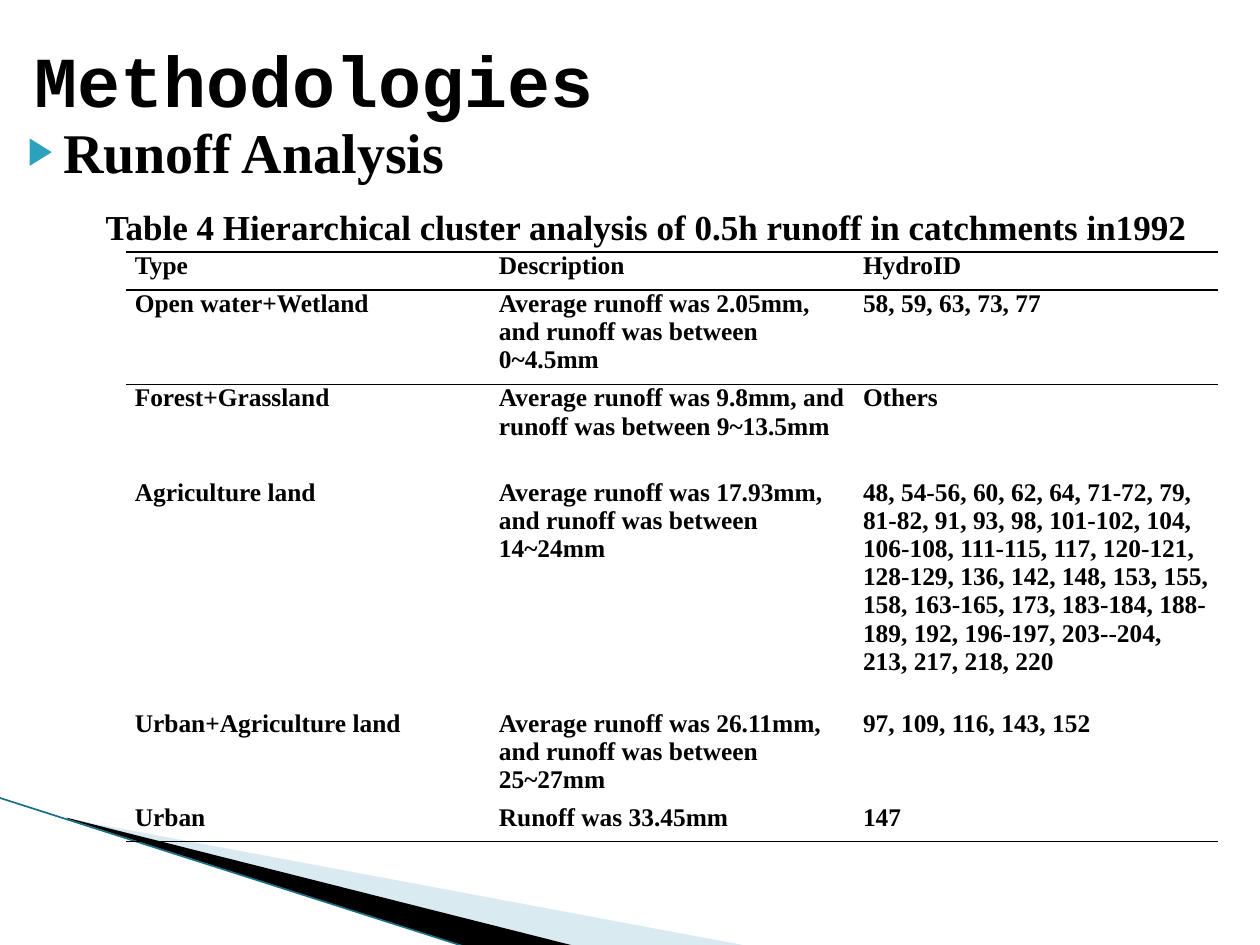
from lxml import etree
from pptx import Presentation
from pptx.dml.color import RGBColor
from pptx.enum.shapes import MSO_CONNECTOR as Conn
from pptx.enum.text import MSO_ANCHOR as Anchor, PP_ALIGN as Align
from pptx.oxml import parse_xml
from pptx.oxml.ns import nsdecls, qn
from pptx.util import Inches, Pt

BLACK = RGBColor(0x00, 0x00, 0x00)
PALE = RGBColor(0xA0, 0xCB, 0xDC)
TEAL = RGBColor(0x1A, 0x6E, 0x85)
SERIF, MONO = "Times New Roman", "Courier New"
NO_GRID = "{2D5ABB26-0587-4C30-8999-92F81FD0307C}"

ROWS = [
    ("Type", "Description", "HydroID"),
    ("Open water+Wetland",
     "Average runoff was 2.05mm, and runoff was between 0~4.5mm",
     "58, 59, 63, 73, 77"),
    ("Forest+Grassland",
     "Average runoff was 9.8mm, and runoff was between 9~13.5mm",
     "Others"),
    ("Agriculture land",
     "Average runoff was 17.93mm, and runoff was between 14~24mm",
     "48, 54-56, 60, 62, 64, 71-72, 79, 81-82, 91, 93, 98, 101-102, 104, "
     "106-108, 111-115, 117, 120-121, 128-129, 136, 142, 148, 153, 155, 158, "
     "163-165, 173, 183-184, 188-189, 192, 196-197, 203--204, 213, 217, 218, 220"),
    ("Urban+Agriculture land",
     "Average runoff was 26.11mm, and runoff was between 25~27mm",
     "97, 109, 116, 143, 152"),
    ("Urban", "Runoff was 33.45mm", "147"),
]
HEIGHTS = [0.3, 0.75, 0.75, 1.83, 0.75, 0.3]


def write(frame, text, size, font=SERIF, align=Align.LEFT, anchor=Anchor.TOP):
    frame.word_wrap = True
    frame.vertical_anchor = anchor
    para = frame.paragraphs[0]
    para.alignment = align
    para.space_before = Pt(0)
    run = para.add_run()
    run.text = text
    run.font.size, run.font.name, run.font.bold = Pt(size), font, True
    run.font.color.rgb = BLACK
    return para


def place(shape, box):
    shape.left, shape.top, shape.width, shape.height = map(Inches, box)


def add_wedge(slide, points, color, alpha=100):
    spots = [(Inches(x), Inches(y)) for x, y in points]
    build = slide.shapes.build_freeform(*spots[0])
    build.add_line_segments(spots[1:], close=True)
    wedge = build.convert_to_shape()
    wedge.shadow.inherit = False
    wedge.line.fill.background()
    wedge.fill.solid()
    wedge.fill.fore_color.rgb = color
    if alpha < 100:
        tint = wedge.fill._xPr.find(qn("a:solidFill"))[0]
        etree.SubElement(tint, qn("a:alpha"), val=str(alpha * 1000))


def add_decor(slide, box):
    left, top, width, height = box
    right, base = left + width, top + height
    add_wedge(slide, [(left + 0.02, top + 0.01), (right, base),
                      (4.56, base), (left + 0.02, top + 0.01)], PALE, 40)
    add_wedge(slide, [(left, top), (4.57, base), (3.72, base + 0.01),
                      (left + 0.01, top + 0.01)], BLACK)
    edge = slide.shapes.add_connector(
        Conn.STRAIGHT, Inches(-0.01), Inches(6.33), Inches(3.71), Inches(7.52))
    edge.line.color.rgb = TEAL
    edge.line.width = Pt(0.95)
    etree.SubElement(edge._element.spPr, qn("a:effectLst"))


def add_title(slide, box):
    title = slide.shapes.title
    place(title, box)
    write(title.text_frame, "Methodologies", 41, MONO, anchor=Anchor.MIDDLE)


def add_topic(slide, box):
    body = slide.placeholders[1]
    place(body, box)
    para = write(body.text_frame, "Runoff Analysis", 32)
    props = para._p.get_or_add_pPr()
    props.set("marL", str(Inches(0.4)))
    props.set("indent", str(Inches(-0.28)))
    for tag in ('buClr {}><a:srgbClr val="2DA2BF"/></a:buClr>',
                'buSzPct {} val="68000"/>',
                'buFont {} typeface="Arial"/>',
                'buChar {} char="▶"/>'):
        props.append(parse_xml("<a:" + tag.format(nsdecls("a"))))


def add_caption(slide, box):
    label = slide.shapes.add_textbox(*map(Inches, box))
    write(label.text_frame,
          "Table 4 Hierarchical cluster analysis of 0.5h runoff in catchments in1992 ",
          20, align=Align.CENTER)


def add_rule(cell, side):
    cell._tc.get_or_add_tcPr().append(parse_xml(
        f'<a:ln{side} {nsdecls("a")} w="{Pt(1)}"><a:solidFill>'
        f'<a:srgbClr val="{BLACK}"/></a:solidFill></a:ln{side}>'))


def add_grid(slide, box):
    frame = slide.shapes.add_table(len(ROWS), len(ROWS[0]), *map(Inches, box))
    table = frame.table
    table.first_row = table.horz_banding = False
    table._tbl.tblPr.find(qn("a:tableStyleId")).text = NO_GRID
    for col in table.columns:
        col.width = Inches(box[2] / len(ROWS[0]))
    for i, (texts, height) in enumerate(zip(ROWS, HEIGHTS)):
        table.rows[i].height = Inches(height)
        for j, text in enumerate(texts):
            cell = table.cell(i, j)
            cell.margin_left = cell.margin_right = Inches(0.07)
            cell.margin_top = cell.margin_bottom = 0
            write(cell.text_frame, text, 14.5)
            # Rules frame the header and close the table
            if i < 2:
                add_rule(cell, "T")
            if i in (0, len(ROWS) - 1):
                add_rule(cell, "B")
            cell.fill.background()


def main():
    deck = Presentation()
    deck.slide_width, deck.slide_height = Inches(10), Inches(7.5)
    slide = deck.slides.add_slide(deck.slide_layouts[1])
    add_decor(slide, (0.53, 6.49, 5.42, 1.02))
    add_topic(slide, (0, 0.88, 5.33, 0.62))
    add_title(slide, (0.17, 0, 9, 1.25))
    add_caption(slide, (0.58, 1.58, 9.17, 0.44))
    add_grid(slide, (1, 2, 8.67, sum(HEIGHTS)))
    deck.save("out.pptx")


if __name__ == "__main__":
    main()
